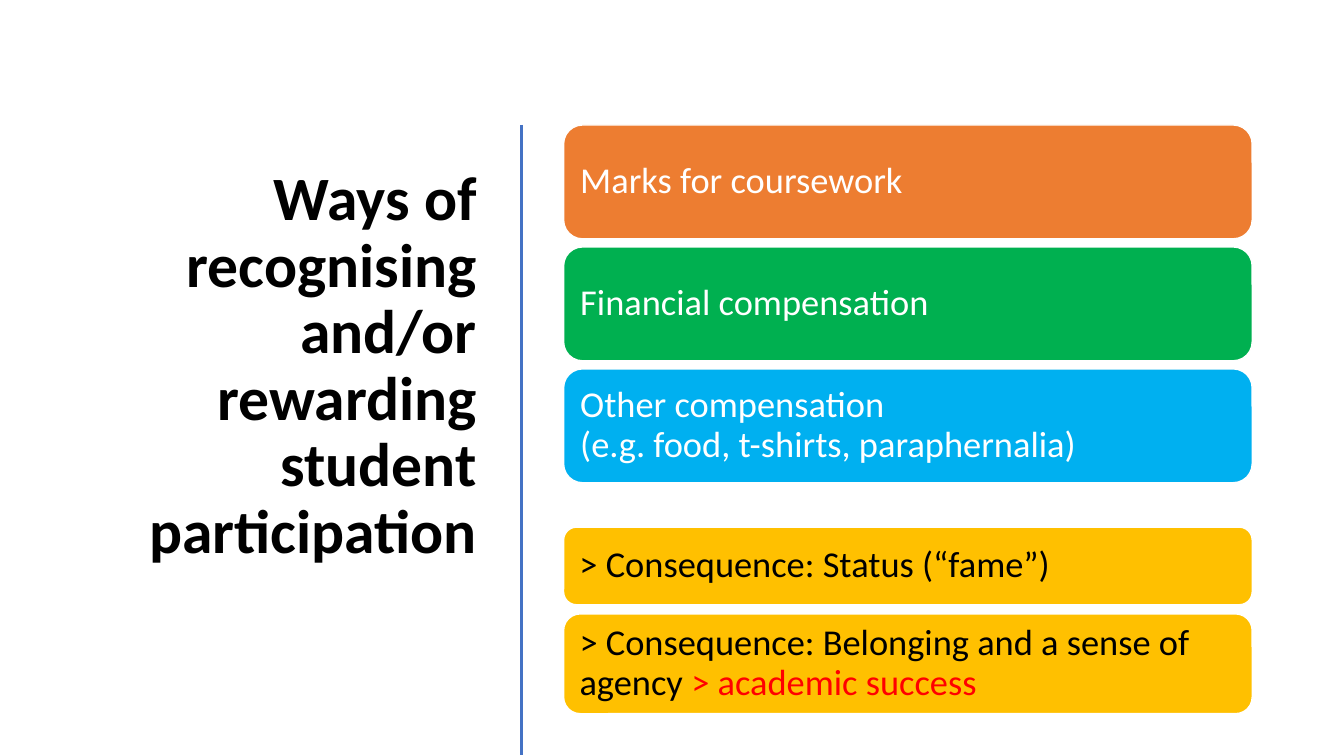
from lxml import etree
from pptx import Presentation
from pptx import util as u
from pptx.dml.color import RGBColor
from pptx.enum import shapes, text
from pptx.oxml.ns import qn

PX = 9144
WHITE, BLACK, RED = "FFFFFF", "000000", "FF0000"
ORANGE, GREEN, SKY, AMBER, BLUE = "ED7D31", "00B050", "00B0F0", "FFC000", "4472C4"


def px(length):
    return u.Emu(length * PX)


def colour(hex_value):
    return RGBColor.from_string(hex_value)


class RewardSlide:
    font = "Calibri"
    title_size = 44
    card_size = 26
    card_left = 559
    card_width = 683
    text_indent = 16
    corner = 1 / 6

    def __init__(self, deck):
        self.page = deck.slides.add_slide(deck.slide_layouts[5])

    def style(self, span, size, hex_value, bold=False):
        span.font.name = self.font
        span.font.size = u.Pt(size)
        span.font.bold = bold
        span.font.color.rgb = colour(hex_value)

    def title(self, wording, left, top, width, height):
        box = self.page.shapes.title
        box.left, box.top, box.width, box.height = map(px, (left, top, width, height))
        frame = box.text_frame
        frame.text = wording
        frame.word_wrap = True
        frame.auto_size = text.MSO_AUTO_SIZE.NONE
        frame.vertical_anchor = text.MSO_ANCHOR.MIDDLE
        para = frame.paragraphs[0]
        para.alignment = text.PP_ALIGN.RIGHT
        para.line_spacing = 0.9
        para.space_after = u.Pt(6)
        self.style(para.runs[0], self.title_size, BLACK, bold=True)

    def divider(self, left, top, bottom):
        line = self.page.shapes.add_connector(
            shapes.MSO_CONNECTOR.STRAIGHT, px(left), px(top), px(left), px(bottom))
        line.line.color.rgb = colour(BLUE)
        line.line.width = u.Pt(2)
        etree.SubElement(line._element.spPr, qn("a:effectLst"))

    def card(self, top, height, fill, wording, ink, ending=""):
        box = self.page.shapes.add_shape(
            shapes.MSO_SHAPE.ROUNDED_RECTANGLE,
            px(self.card_left), px(top), px(self.card_width), px(height))
        box.adjustments[0] = self.corner
        box.shadow.inherit = False
        box.fill.solid()
        box.fill.fore_color.rgb = colour(fill)
        box.line.color.rgb = colour(WHITE)
        box.line.width = u.Pt(1)
        frame = box.text_frame
        frame.word_wrap = True
        frame.vertical_anchor = text.MSO_ANCHOR.MIDDLE
        inset = px(round(self.text_indent - 0.29 * self.corner * height))
        frame.margin_left = frame.margin_right = inset
        frame.margin_top = frame.margin_bottom = inset
        para = frame.paragraphs[0]
        para.text = wording
        para.alignment = text.PP_ALIGN.LEFT
        para.line_spacing = 0.9
        for span in para.runs:
            self.style(span, self.card_size, ink)
        if ending:
            span = para.add_run()
            span.text = ending
            self.style(span, self.card_size, RED)


def main():
    deck = Presentation()
    deck.slide_width, deck.slide_height = px(1333), px(750)
    slide = RewardSlide(deck)
    slide.title("Ways of recognising and/or rewarding student participation", 52, 0, 431, 728)
    slide.divider(517, 124, 749)

    rewards = [
        (ORANGE, "Marks for coursework"),
        (GREEN, "Financial compensation"),
        (SKY, "Other compensation\v(e.g. food, t-shirts, paraphernalia)"),
    ]
    for row, (fill, wording) in enumerate(rewards):
        slide.card(124 + 121 * row, 113, fill, wording, WHITE)

    slide.card(523, 77, AMBER, "> Consequence: Status (“fame”)", BLACK)
    slide.card(609, 99, AMBER, "> Consequence: Belonging and a sense of agency ", BLACK,
               "> academic success")
    deck.save("out.pptx")


if __name__ == "__main__":
    main()
